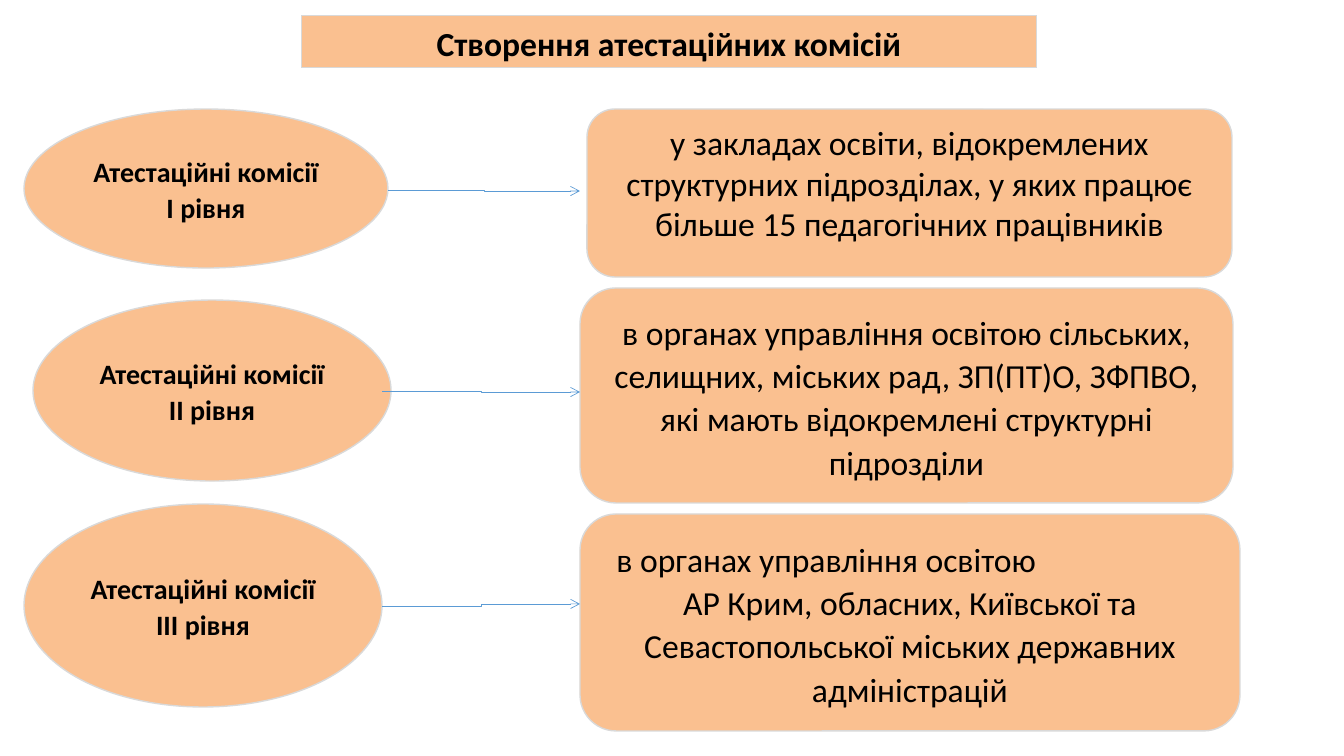
"""Build the slide on creating three levels of attestation commissions."""
import dataclasses

import lxml.etree
import pptx
import pptx.dml.color
import pptx.enum.shapes
import pptx.enum.text
import pptx.oxml.ns
import pptx.shapes.autoshape
import pptx.shapes.connector
import pptx.slide
import pptx.util

EMU_PER_PX = 914400 / 100.8
COLOURS = {"fill": "FAC090", "outline": "D9D9D9", "arrow": "5B9BD5", "text": "000000"}
FONT = "Calibri"
LINE_SPACING = 1.07
CENTER = pptx.enum.text.PP_ALIGN.CENTER
LEFT = pptx.enum.text.PP_ALIGN.LEFT
TOP = pptx.enum.text.MSO_ANCHOR.TOP
MIDDLE = pptx.enum.text.MSO_ANCHOR.MIDDLE
OVAL = pptx.enum.shapes.MSO_SHAPE.OVAL
ROUNDED = pptx.enum.shapes.MSO_SHAPE.ROUNDED_RECTANGLE


@dataclasses.dataclass(frozen=True)
class Box:
    left: int
    top: int
    width: int
    height: int


@dataclasses.dataclass(frozen=True)
class Arrow:
    begin_x: int
    begin_y: int
    end_x: int
    end_y: int


@dataclasses.dataclass(frozen=True)
class Level:
    name: str
    name_box: Box
    arrow: Arrow
    place: str
    place_box: Box
    anchor: pptx.enum.text.MSO_ANCHOR = MIDDLE
    spacing: float = LINE_SPACING
    first_line_indent: int = 0


TITLE_BOX = Box(301, 15, 736, 53)
LEVELS = [
    Level("Атестаційні комісії І рівня", Box(24, 109, 364, 159),
          Arrow(388, 190, 580, 191),
          "у закладах освіти, відокремлених структурних підрозділах, у яких працює "
          "більше 15 педагогічних працівників",
          Box(587, 109, 645, 168), anchor=TOP, spacing=1.0),
    Level("Атестаційні комісії ІІ рівня", Box(33, 300, 358, 181),
          Arrow(382, 391, 580, 392),
          "в органах управління освітою сільських, селищних, міських рад, ЗП(ПТ)О, "
          "ЗФПВО, які мають відокремлені структурні підрозділи",
          Box(580, 288, 653, 215)),
    Level("Атестаційні комісії ІІІ рівня", Box(24, 504, 358, 203),
          Arrow(382, 606, 580, 604),
          "в органах управління освітою\n"
          "АР Крим, обласних, Київської та Севастопольської міських державних "
          "адміністрацій",
          Box(580, 514, 660, 217), first_line_indent=16),
]


def px(length: int) -> pptx.util.Emu:
    """Turn pixels into EMU."""
    return pptx.util.Emu(round(length * EMU_PER_PX))


def colour(name: str) -> pptx.dml.color.RGBColor:
    """Look up a named colour."""
    return pptx.dml.color.RGBColor.from_string(COLOURS[name])


def paint(shape: pptx.shapes.autoshape.Shape, line_width: float) -> None:
    """Give a shape the common fill and outline."""
    shape.fill.solid()
    shape.fill.fore_color.rgb = colour("fill")
    shape.line.color.rgb = colour("outline")
    shape.line.width = pptx.util.Pt(line_width)


def write(shape: pptx.shapes.autoshape.Shape, text: str, size: int, bold: bool,
          anchor: pptx.enum.text.MSO_ANCHOR, spacing: float = LINE_SPACING) -> None:
    """Fill a shape with centred text."""
    text_frame = shape.text_frame
    text_frame.text = text
    text_frame.word_wrap = True
    text_frame.auto_size = pptx.enum.text.MSO_AUTO_SIZE.NONE
    text_frame.vertical_anchor = anchor
    for paragraph in text_frame.paragraphs:
        paragraph.alignment = CENTER
        paragraph.line_spacing = spacing
        for run in paragraph.runs:
            run.font.name = FONT
            run.font.size = pptx.util.Pt(size)
            run.font.bold = bold
            run.font.color.rgb = colour("text")


def add_title(slide: pptx.slide.Slide, text: str, box: Box) -> None:
    """Place and format the title placeholder."""
    title = slide.shapes.title
    title.left, title.top = px(box.left), px(box.top)
    title.width, title.height = px(box.width), px(box.height)
    paint(title, 0)
    write(title, text, 24, True, TOP)


def add_box(slide: pptx.slide.Slide, kind: pptx.enum.shapes.MSO_SHAPE,
            box: Box) -> pptx.shapes.autoshape.Shape:
    """Add a painted preset shape."""
    shape = slide.shapes.add_shape(
        kind, px(box.left), px(box.top), px(box.width), px(box.height))
    shape.shadow.inherit = False
    paint(shape, 1)
    return shape


def add_arrow(slide: pptx.slide.Slide, arrow: Arrow) -> pptx.shapes.connector.Connector:
    """Add a thin elbow connector with an open arrowhead."""
    connector = slide.shapes.add_connector(
        pptx.enum.shapes.MSO_CONNECTOR.ELBOW, px(arrow.begin_x), px(arrow.begin_y),
        px(arrow.end_x), px(arrow.end_y))
    connector.line.color.rgb = colour("arrow")
    connector.line.width = pptx.util.Pt(0.5)
    tag = pptx.oxml.ns.qn
    line = connector.line._get_or_add_ln()
    lxml.etree.SubElement(line, tag("a:tailEnd"), type="arrow")
    lxml.etree.SubElement(connector._element.spPr, tag("a:effectLst"))
    return connector


def add_level(slide: pptx.slide.Slide, level: Level) -> None:
    """Draw one level: its name, its place and the arrow between them."""
    name = add_box(slide, OVAL, level.name_box)
    write(name, level.name, 20, True, MIDDLE)
    place = add_box(slide, ROUNDED, level.place_box)
    write(place, level.place, 24, False, level.anchor, level.spacing)
    if level.first_line_indent:
        first = place.text_frame.paragraphs[0]
        first.alignment = LEFT
        first._p.get_or_add_pPr().set("marL", str(px(level.first_line_indent)))
    add_arrow(slide, level.arrow)


def main() -> None:
    """Build and save the presentation."""
    presentation = pptx.Presentation()
    presentation.slide_width, presentation.slide_height = px(1344), px(756)
    slide = presentation.slides.add_slide(presentation.slide_layouts[5])
    add_title(slide, "Створення атестаційних комісій", TITLE_BOX)
    for level in LEVELS:
        add_level(slide, level)
    presentation.save("out.pptx")


if __name__ == "__main__":
    main()
